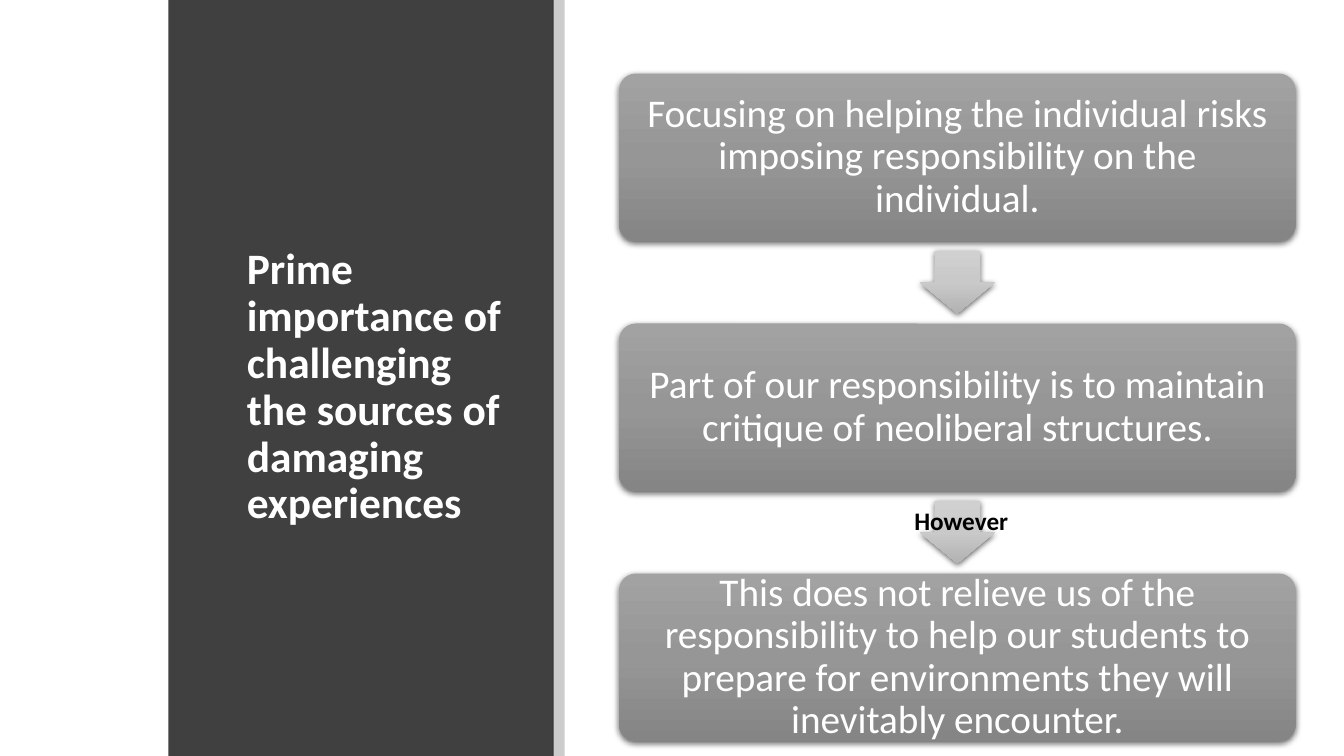
from pptx import Presentation
from pptx.dml.color import RGBColor
from pptx.enum.shapes import MSO_SHAPE
from pptx.enum.text import MSO_ANCHOR, PP_ALIGN
from pptx.oxml import parse_xml
from pptx.oxml.ns import qn
from pptx.util import Inches, Pt
from lxml import etree

FONT = "Calibri"
NAMESPACE = 'xmlns:a="http://schemas.openxmlformats.org/drawingml/2006/main"'
CARD_STOPS = ("A2A2A2", "969696", "858585")
ARROW_STOPS = ("D0D0D0", "C9C9C9", "B2B2B2")

CARD_LEFT, CARD_TOP, CARD_WIDTH, CARD_HEIGHT = 6.14, 0.73, 6.71, 1.66
CARD_PITCH = 2.48
ARROW_WIDTH, ARROW_HEIGHT = 0.75, 0.62

STATEMENTS = (
    "Focusing on helping the individual risks imposing responsibility on the individual.",
    "Part of our responsibility is to maintain critique of neoliberal structures.",
    "This does not relieve us of the responsibility to help our students to "
    "prepare for environments they will inevitably encounter.",
)


def color(value):
    return RGBColor.from_string(value)


def add_plain_shape(page, kind, left, top, width, height):
    shape = page.shapes.add_shape(
        kind, Inches(left), Inches(top), Inches(width), Inches(height))
    shape.shadow.inherit = False
    shape.line.fill.background()
    return shape


def add_band(page, left, width, fill, opacity=100):
    """Add a full-height vertical band; opacity is in percent."""
    band = add_plain_shape(page, MSO_SHAPE.RECTANGLE, left, 0, width, 7.5)
    band.fill.solid()
    band.fill.fore_color.rgb = color(fill)
    if opacity < 100:
        fill_color = band.fill._xPr.find(qn("a:solidFill"))[0]
        etree.SubElement(fill_color, qn("a:alpha"), val=str(opacity * 1000))


def add_shaded_shape(page, kind, left, top, width, height, stops):
    """Add a shape with a top-to-bottom gradient and a soft shadow below."""
    shape = add_plain_shape(page, kind, left, top, width, height)
    stop_list = "".join(
        f'<a:gs pos="{index * 50000}"><a:srgbClr val="{stop}"/></a:gs>'
        for index, stop in enumerate(stops))
    properties = shape._element.spPr
    properties.find(qn("a:prstGeom")).addnext(parse_xml(
        f'<a:gradFill {NAMESPACE} rotWithShape="1"><a:gsLst>{stop_list}</a:gsLst>'
        '<a:lin ang="5400000" scaled="0"/></a:gradFill>'))
    properties.find(qn("a:effectLst")).append(parse_xml(
        f'<a:outerShdw {NAMESPACE} blurRad="57150" dist="19050" dir="5400000" '
        'algn="ctr" rotWithShape="0"><a:srgbClr val="000000">'
        '<a:alpha val="63000"/></a:srgbClr></a:outerShdw>'))
    return shape


def write_text(shape, text, size, font_color, bold=False, align=PP_ALIGN.LEFT,
               anchor=MSO_ANCHOR.MIDDLE, line_spacing=0.9):
    frame = shape.text_frame
    frame.word_wrap = True
    frame.vertical_anchor = anchor
    frame.text = text
    para = frame.paragraphs[0]
    para.alignment = align
    para.line_spacing = line_spacing
    font = para.runs[0].font
    font.name, font.size, font.bold = FONT, Pt(size), bold
    font.color.rgb = color(font_color)


def add_label(page, left, top, width, height, text, size, font_color, **style):
    box = page.shapes.add_textbox(
        Inches(left), Inches(top), Inches(width), Inches(height))
    write_text(box, text, size, font_color, bold=True, **style)


def add_card(page, top, text):
    card = add_shaded_shape(page, MSO_SHAPE.ROUNDED_RECTANGLE, CARD_LEFT, top,
                            CARD_WIDTH, CARD_HEIGHT, CARD_STOPS)
    card.adjustments[0] = 0.1
    write_text(card, text, 28, "FFFFFF", align=PP_ALIGN.CENTER)
    frame = card.text_frame
    frame.margin_left = frame.margin_right = Inches(0.12)
    frame.margin_top = frame.margin_bottom = Inches(0.12)


def add_arrow_below(page, card_top):
    """Add a down arrow centred in the gap under a card."""
    left = CARD_LEFT + (CARD_WIDTH - ARROW_WIDTH) / 2
    top = card_top + (CARD_HEIGHT + CARD_PITCH - ARROW_HEIGHT) / 2
    arrow = add_shaded_shape(page, MSO_SHAPE.DOWN_ARROW, left, top,
                             ARROW_WIDTH, ARROW_HEIGHT, ARROW_STOPS)
    arrow.adjustments[0] = 0.6
    arrow.adjustments[1] = 0.5


def main():
    deck = Presentation()
    deck.slide_width, deck.slide_height = Inches(13.33), Inches(7.5)
    page = deck.slides.add_slide(deck.slide_layouts[6])

    add_band(page, 1.67, 3.82, "404040")
    add_label(page, 2.35, 0.89, 2.74, 5.91,
              "Prime importance of challenging the sources of damaging experiences",
              31, "FFFFFF")
    add_band(page, 5.48, 0.12, "000000", opacity=20)

    for index, statement in enumerate(STATEMENTS):
        top = CARD_TOP + index * CARD_PITCH
        add_card(page, top, statement)
        if index < len(STATEMENTS) - 1:
            add_arrow_below(page, top)
    add_label(page, 8.97, 4.96, 1.14, 0.4, "However", 18, "000000",
              anchor=MSO_ANCHOR.TOP, line_spacing=1.0)

    deck.save("out.pptx")


if __name__ == "__main__":
    main()
